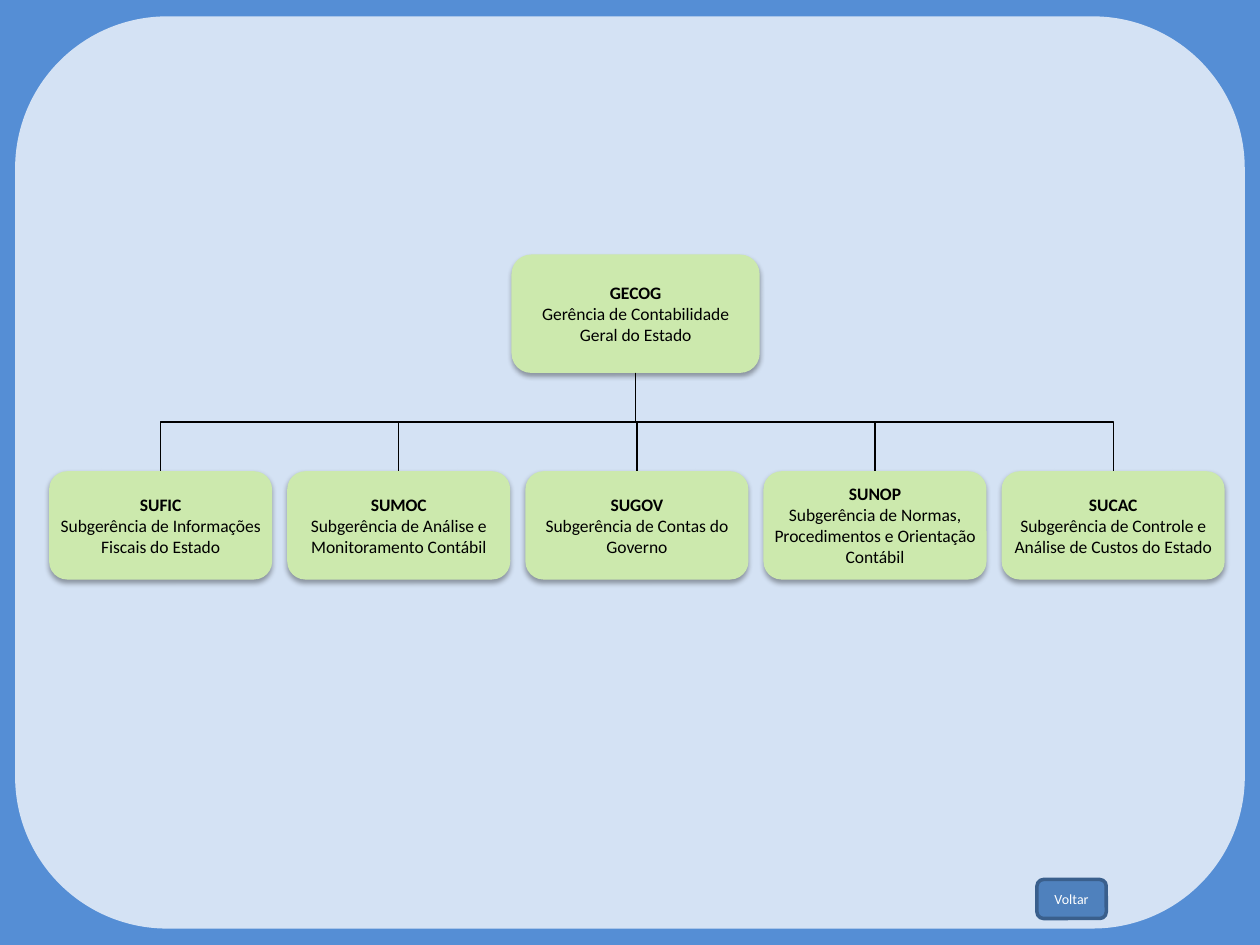
from lxml import etree
from pptx import Presentation, util as u
from pptx.dml import color
from pptx.enum import shapes, text
from pptx.oxml import ns


def rgb(value):
    return color.RGBColor.from_string(value)


def add_box(left, top, width, height, fill, lines=(), size=10, ink="000000", inset=None):
    shape = slide.shapes.add_shape(
        shapes.MSO_SHAPE.ROUNDED_RECTANGLE, *map(u.Inches, (left, top, width, height)))
    shape.shadow.inherit = False
    shape.fill.solid()
    shape.fill.fore_color.rgb = rgb(fill)
    shape.line.fill.background()
    frame = shape.text_frame
    frame_format = {"word_wrap": True, "vertical_anchor": text.MSO_ANCHOR.MIDDLE}
    if inset is not None:
        for side in ("left", "top", "right", "bottom"):
            frame_format["margin_" + side] = u.Inches(inset)
    for name, value in frame_format.items():
        setattr(frame, name, value)
    for index, (line, bold) in enumerate(lines):
        paragraph = frame.add_paragraph() if index else frame.paragraphs[0]
        paragraph.alignment = text.PP_ALIGN.CENTER
        run = paragraph.add_run()
        run.text = line
        for name, value in {"name": "Calibri", "size": u.Pt(size), "bold": bold}.items():
            setattr(run.font, name, value)
        run.font.color.rgb = rgb(ink)
    return shape


def add_shadow(shape):
    effects = shape._element.spPr.find(ns.qn("a:effectLst"))
    shadow = etree.SubElement(effects, ns.qn("a:outerShdw"), blurRad=str(u.Pt(3.1)),
                              dist=str(u.Pt(1.8)), dir="5400000", rotWithShape="0")
    black = etree.SubElement(shadow, ns.qn("a:srgbClr"), val="000000")
    etree.SubElement(black, ns.qn("a:alpha"), val="35000")


WIDTH, HEIGHT = 10, 7.5
GREEN = "CCE9AD"
FIRST_COLUMN, COLUMN_STEP, UNIT_WIDTH = 0.39, 1.89, 1.77
UNIT_ROW, UNIT_HEIGHT = 3.74, 0.86

presentation = Presentation()
presentation.slide_width, presentation.slide_height = u.Inches(WIDTH), u.Inches(HEIGHT)
slide = presentation.slides.add_slide(presentation.slide_layouts[6])
slide.background.fill.solid()
slide.background.fill.fore_color.rgb = rgb("558ED5")

add_box(0.12, 0.13, WIDTH - 0.24, HEIGHT - 0.26, "D4E2F4")
management = add_box(4.06, 2.02, 1.97, 0.94, GREEN, [
    ("GECOG", True), ("Gerência de Contabilidade Geral do Estado", False)])
add_shadow(management)

units = [
    ("SUFIC", "Subgerência de Informações Fiscais do Estado"),
    ("SUMOC", "Subgerência de Análise e Monitoramento Contábil"),
    ("SUGOV", "Subgerência de Contas do Governo"),
    ("SUNOP", "Subgerência de Normas, Procedimentos e Orientação Contábil"),
    ("SUCAC", "Subgerência de Controle e Análise de Custos do Estado"),
]
start_x = management.left + management.width // 2
start_y = management.top + management.height
for column, (acronym, title) in enumerate(units):
    unit = add_box(FIRST_COLUMN + column * COLUMN_STEP, UNIT_ROW, UNIT_WIDTH, UNIT_HEIGHT,
                   GREEN, [(acronym, True), (title, False)], inset=0.04)
    add_shadow(unit)
    end_x = unit.left + unit.width // 2
    connector = slide.shapes.add_connector(
        shapes.MSO_CONNECTOR.ELBOW, start_x, start_y, end_x, unit.top)
    connector.begin_connect(management, 2)
    connector.end_connect(unit, 0)
    drop, span = unit.top - start_y, abs(end_x - start_x)
    turned_frame = {
        "left": (start_x + end_x - drop) // 2,
        "top": (start_y + unit.top - span) // 2,
        "width": drop,
        "height": span,
    }
    for name, value in turned_frame.items():
        setattr(connector, name, value)
    to_right = end_x > start_x
    turn = {"rot": 270 if to_right else 90, "flipH": to_right, "flipV": False}
    for name, value in turn.items():
        setattr(connector._element.spPr.xfrm, name, value)
    connector.line.width = u.Pt(0.75)
    connector.line.color.rgb = rgb("000000")
    etree.SubElement(connector._element.spPr, ns.qn("a:effectLst"))

back_button = add_box(8.23, 6.98, 0.55, 0.31, "4F81BD", [("Voltar", False)], 8, "FFFFFF")
back_button.line.width = u.Pt(2)
back_button.line.color.rgb = rgb("3A5F8C")

presentation.save("out.pptx")
